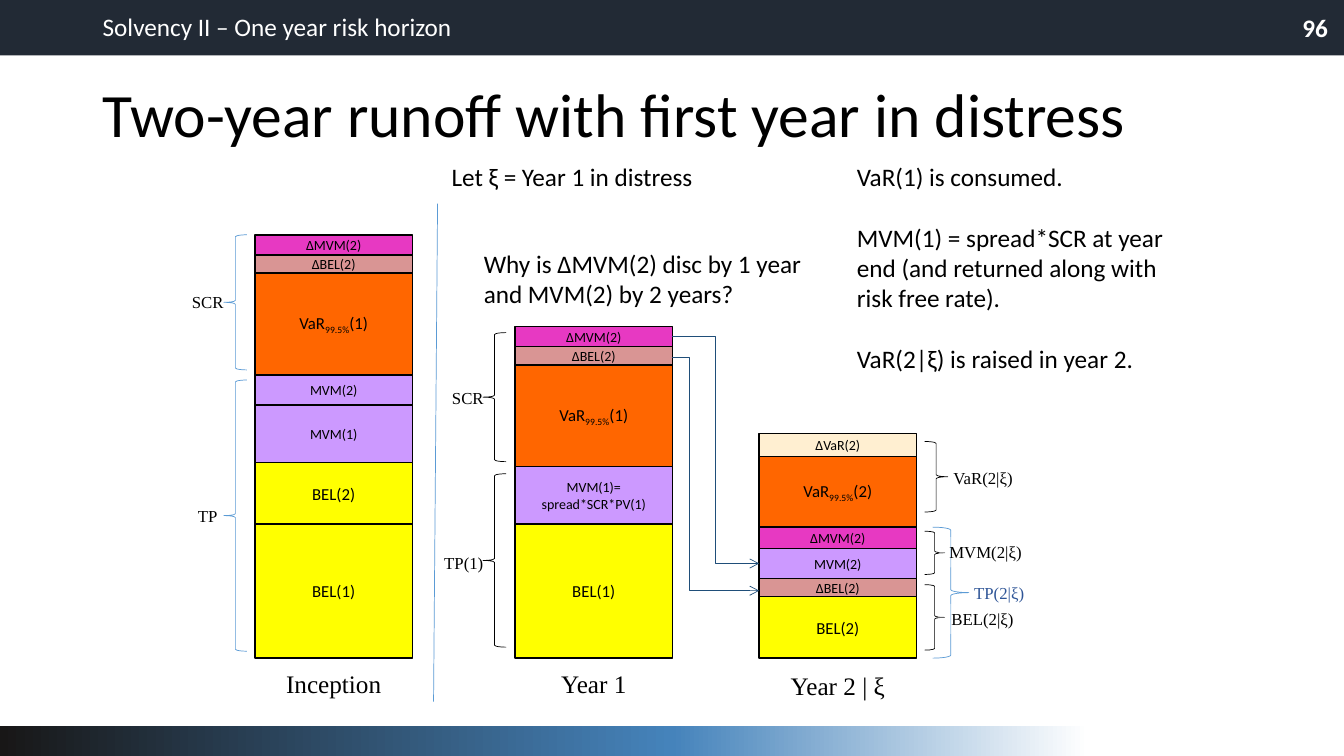
from copy import deepcopy

from pptx import Presentation
from pptx.dml.color import RGBColor
from pptx.enum.shapes import MSO_CONNECTOR, MSO_SHAPE
from pptx.enum.text import MSO_ANCHOR, PP_ALIGN
from pptx.oxml.ns import qn
from pptx.oxml.xmlchemy import OxmlElement
from pptx.util import Inches, Pt

COLORS = {
    "black": "000000", "white": "FFFFFF", "banner": "222A35",
    "footer start": "181717", "footer middle": "4583BB",
    "brace": "5B9BD5", "arrow": "1F4E79", "provision": "2F5597",
    "BEL": "FFFF00", "MVM": "CC99FF", "VaR": "FF6600",
    "ΔBEL": "D99594", "ΔMVM": "E739C2", "ΔVaR": "FFEFD1",
}
SERIF = "Times New Roman"
BLOCK_WIDTH = 1.56
BASELINE = 6.53

# Caption, left edge, caption top, then blocks from the bottom up:
# kind, text, height, text size
COLUMNS = [
    ("Inception", 2.53, 6.58, [
        ("BEL", "BEL(1)", 1.33, 12), ("BEL", "BEL(2)", 0.61, 12),
        ("MVM", "MVM(1)", 0.57, 10), ("MVM", "MVM(2)", 0.3, 10),
        ("VaR", "VaR_99.5%_(1)", 1.01, 12),
        ("ΔBEL", "ΔBEL(2)", 0.18, 10), ("ΔMVM", "ΔMVM(2)", 0.2, 10)]),
    ("Year 1", 5.11, 6.58, [
        ("BEL", "BEL(1)", 1.33, 12),
        ("MVM", "MVM(1)=\nspread*SCR*PV(1)", 0.57, 10),
        ("VaR", "VaR_99.5%_(1)", 1.01, 12),
        ("ΔBEL", "ΔBEL(2)", 0.18, 10), ("ΔMVM", "ΔMVM(2)", 0.2, 10)]),
    ("Year 2 | ξ", 7.53, 6.6, [
        ("BEL", "BEL(2)", 0.61, 12), ("ΔBEL", "ΔBEL(2)", 0.18, 10),
        ("MVM", "MVM(2)", 0.3, 10), ("ΔMVM", "ΔMVM(2)", 0.21, 10),
        ("VaR", "VaR_99.5%_(2)", 0.7, 12), ("ΔVaR", "ΔVaR(2)", 0.23, 10)]),
]
LEFT, RIGHT = MSO_SHAPE.LEFT_BRACE, MSO_SHAPE.RIGHT_BRACE
BRACES = [
    (LEFT, 2.22, 2.33, 0.23, 1.34, "brace"),
    (LEFT, 2.22, 3.77, 0.23, 2.69, "brace"),
    (LEFT, 4.79, 3.3, 0.23, 1.28, "black"),
    (LEFT, 4.79, 4.7, 0.23, 1.72, "black"),
    (RIGHT, 9.25, 5.23, 0.36, 1.3, "brace"),
    (RIGHT, 9.17, 4.38, 0.23, 0.7, "black"),
    (RIGHT, 9.17, 5.27, 0.2, 0.43, "black"),
    (RIGHT, 9.17, 5.8, 0.2, 0.65, "black"),
]
# Text, left, top, width, whether a translucent backing is needed, colour
BRACE_LABELS = [
    ("SCR", 1.55, 2.85, 1.02, False, "black"),
    ("TP", 1.55, 4.97, 1.02, False, "black"),
    ("SCR", 4.13, 3.8, 1.02, False, "black"),
    ("TP(1)", 4.09, 5.43, 1.02, False, "black"),
    ("VaR(2|ξ)", 9.24, 4.59, 1.02, False, "black"),
    ("MVM(2|ξ)", 9.31, 5.33, 0.93, True, "black"),
    ("BEL(2|ξ)", 9.3, 5.99, 0.89, True, "black"),
    ("TP(2|ξ)", 9.4, 5.73, 1.02, False, "provision"),
]


def rgb(name):
    return RGBColor.from_string(COLORS[name])


def write(shape, text, size, color="black", font="Calibri",
          align=PP_ALIGN.LEFT, bold=False, gap=0):
    """Fill a shape with one paragraph per line; _text_ becomes a subscript."""
    frame = shape.text_frame
    frame.word_wrap = True
    if align == PP_ALIGN.CENTER:
        frame.margin_left = frame.margin_right = 0
    for index, line in enumerate(text.split("\n")):
        para = frame.add_paragraph() if index else frame.paragraphs[0]
        para.alignment = align
        para.space_before = Pt(gap if index else 0)
        for position, part in enumerate(line.split("_")):
            span = para.add_run()
            span.text = part
            settings = {"size": Pt(size), "name": font, "bold": bold}
            for key, value in settings.items():
                setattr(span.font, key, value)
            span.font.color.rgb = rgb(color)
            if position % 2:
                span._r.get_or_add_rPr().set("baseline", "-25000")


def add_text(page, text, left, top, width, height, size=18, **options):
    box = page.shapes.add_textbox(*map(Inches, (left, top, width, height)))
    write(box, text, size, **options)
    return box


def add_figure(page, preset, left, top, width, height, fill=None, line=None, weight=1):
    figure = page.shapes.add_shape(preset, *map(Inches, (left, top, width, height)))
    figure.shadow.inherit = False
    if fill:
        figure.fill.solid()
        figure.fill.fore_color.rgb = rgb(fill)
    else:
        figure.fill.background()
    if line:
        figure.line.color.rgb = rgb(line)
        figure.line.width = Pt(weight)
    else:
        figure.line.fill.background()
    return figure


def add_footer(page):
    footer = add_figure(page, MSO_SHAPE.RECTANGLE, 0, 7.2, 13.33, 0.3)
    footer.fill.gradient()
    footer.fill.gradient_angle = 0
    stop_list = footer._element.spPr.find(qn("a:gradFill")).find(qn("a:gsLst"))
    stop_list.append(deepcopy(stop_list[0]))
    stops = ((0, "footer start"), (0.5, "footer middle"), (0.81, "white"))
    for stop, (position, color) in zip(footer.fill.gradient_stops, stops):
        stop.position = position
        stop.color.rgb = rgb(color)


def add_line(page, kind, start, end, color):
    line = page.shapes.add_connector(kind, *map(Inches, (*start, *end)))
    line.line.color.rgb = rgb(color)
    line.line.width = Pt(0.5)
    line._element.spPr.append(OxmlElement("a:effectLst"))
    return line


def add_bent_arrow(page, start, end, bend):
    """Draw an elbow arrow that turns at the given share of its width."""
    arrow = add_line(page, MSO_CONNECTOR.ELBOW, start, end, "arrow")
    head = OxmlElement("a:tailEnd")
    head.set("type", "arrow")
    arrow.line._get_or_add_ln().append(head)
    guide = OxmlElement("a:gd")
    guide.set("name", "adj1")
    guide.set("fmla", f"val {round(bend * 100000)}")
    arrow._element.spPr.find(qn("a:prstGeom")).get_or_add_avLst().append(guide)


def add_column(page, caption, left, caption_top, blocks):
    top = BASELINE
    for kind, text, height, size in blocks:
        top -= height
        block = add_figure(page, MSO_SHAPE.RECTANGLE, left, top, BLOCK_WIDTH, height,
                           fill=kind, line="black")
        frame = block.text_frame
        frame.margin_top = frame.margin_bottom = 0
        frame.vertical_anchor = MSO_ANCHOR.MIDDLE
        write(block, text, size, align=PP_ALIGN.CENTER)
    add_text(page, caption, left, caption_top, BLOCK_WIDTH, 0.4,
             font=SERIF, align=PP_ALIGN.CENTER)


def add_brace_label(page, text, left, top, width, backed, color):
    label = add_text(page, text, left, top, width, 0.3, size=12,
                     color=color, font=SERIF, align=PP_ALIGN.CENTER)
    if backed:
        label.fill.solid()
        label.fill.fore_color.rgb = rgb("white")
        alpha = OxmlElement("a:alpha")
        alpha.set("val", "40000")
        label._element.spPr.find(qn("a:solidFill"))[0].append(alpha)


def add_title(page, text):
    title = page.shapes.title
    place = {"left": 0.92, "top": 0.74, "width": 11.5, "height": 0.86}
    for key, value in place.items():
        setattr(title, key, Inches(value))
    title.text_frame.vertical_anchor = MSO_ANCHOR.MIDDLE
    write(title, text, 44)
    title.text_frame.paragraphs[0].line_spacing = 0.9


def main():
    deck = Presentation()
    deck.slide_width, deck.slide_height = Inches(13.33), Inches(7.5)
    page = deck.slides.add_slide(deck.slide_layouts[5])

    add_figure(page, MSO_SHAPE.RECTANGLE, 0, 0, 13.33, 0.55, fill="banner")
    add_footer(page)
    add_title(page, "Two-year runoff with first year in distress")
    add_text(page, "Solvency II – One year risk horizon", 0.92, 0.06, 6.23, 0.4,
             color="white")
    add_text(page, "96", 10.27, 0.07, 3, 0.4, color="white",
             align=PP_ALIGN.RIGHT, bold=True)

    for column in COLUMNS:
        add_column(page, *column)
    add_bent_arrow(page, (6.67, 3.34), (7.53, 5.59), 0.5)
    add_bent_arrow(page, (6.67, 3.55), (7.53, 5.86), 0.2)
    for preset, left, top, width, height, color in BRACES:
        add_figure(page, preset, left, top, width, height, line=color, weight=0.5)
    for label in BRACE_LABELS:
        add_brace_label(page, *label)
    add_line(page, MSO_CONNECTOR.STRAIGHT, (4.34, 2.02), (4.3, 6.96), "brace")

    add_text(page, "Let ξ = Year 1 in distress", 4.38, 1.55, 3.98, 0.4)
    add_text(page, "Why is ΔMVM(2) disc by 1 year and MVM(2) by 2 years?",
             4.7, 2.41, 3.7, 0.71)
    add_text(page, "VaR(1) is consumed.\n"
             "MVM(1) = spread*SCR at year end (and returned along with risk free rate).\n"
             "VaR(2|ξ) is raised in year 2.", 8.4, 1.55, 3.31, 2.22, gap=22)
    deck.save("out.pptx")


if __name__ == "__main__":
    main()
